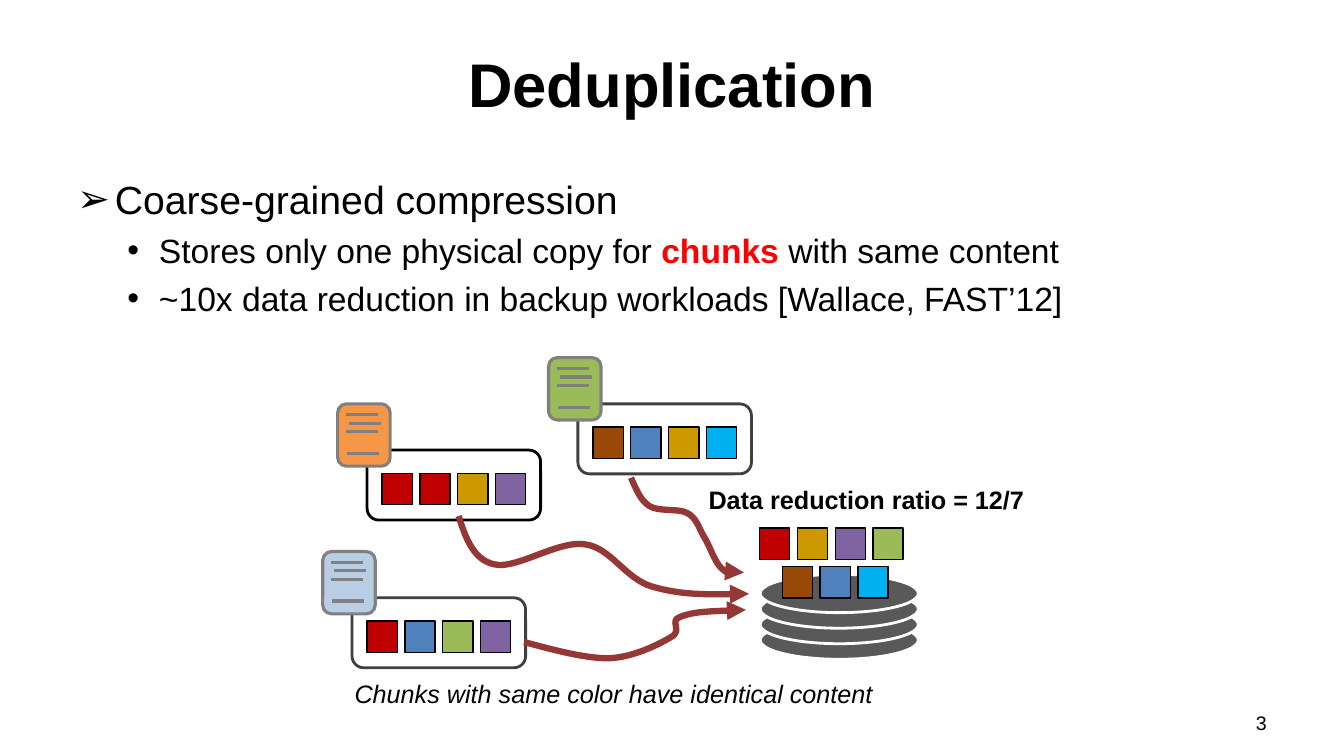
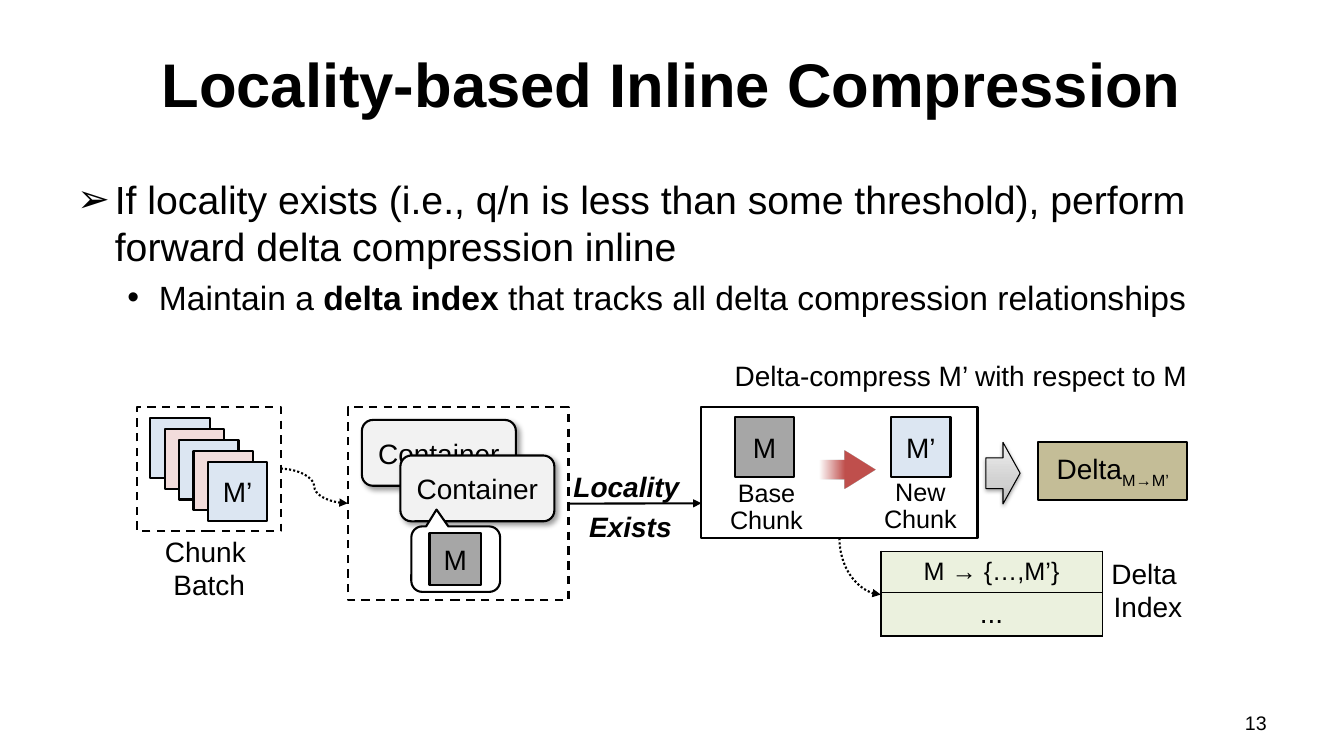
from lxml import etree
from pptx import Presentation
from pptx.dml.color import RGBColor
from pptx.enum.dml import MSO_LINE
from pptx.enum.shapes import MSO_CONNECTOR, MSO_SHAPE
from pptx.enum.text import MSO_ANCHOR, PP_ALIGN
from pptx.oxml.ns import qn
from pptx.util import Pt

RECT, ROUND, OVAL = MSO_SHAPE.RECTANGLE, MSO_SHAPE.ROUNDED_RECTANGLE, MSO_SHAPE.OVAL
ARROW, CALLOUT = MSO_SHAPE.RIGHT_ARROW, MSO_SHAPE.ROUNDED_RECTANGULAR_CALLOUT
STRAIGHT, CURVE = MSO_CONNECTOR.STRAIGHT, MSO_CONNECTOR.CURVE
LEFT, CENTER, RIGHT = PP_ALIGN.LEFT, PP_ALIGN.CENTER, PP_ALIGN.RIGHT
TOP, MIDDLE = MSO_ANCHOR.TOP, MSO_ANCHOR.MIDDLE
DASH, DOTS = MSO_LINE.DASH, MSO_LINE.ROUND_DOT

FONT = "Arial"
color = RGBColor.from_string
BLACK, WHITE, GREY = "000000", "FFFFFF", "808080"
RED, BLUE, GREEN, PURPLE = "C00000", "4F81BD", "9BBB59", "8064A2"
GOLD, BROWN, CYAN = "CC9900", "984807", "00B0F0"
PALE_BLUE, PALE_RED, MID_GREY = "DCE6F2", "F2DCDB", "A6A6A6"


def write(frame, *spans, size=20, bold=False, italic=False, align=CENTER,
          anchor=None, inset=None, spacing=None, before=0, bullet=None, level=0, indent=(0, 0)):
    """Add one paragraph; a span is a string or a (string, overrides) pair."""
    frame.word_wrap = True
    if anchor is not None:
        frame.vertical_anchor = anchor
    if inset is not None:
        frame.margin_left = frame.margin_right = frame.margin_top = frame.margin_bottom = Pt(inset)
    para = frame.add_paragraph() if frame.text else frame.paragraphs[0]
    para.alignment, para.level, para.space_before = align, level, Pt(before)
    if spacing:
        para.line_spacing = spacing
    if bullet:
        settings = para._p.get_or_add_pPr()
        settings.set("marL", str(Pt(indent[0])))
        settings.set("indent", str(Pt(indent[1])))
        etree.SubElement(settings, qn("a:buFont")).set("typeface", FONT)
        etree.SubElement(settings, qn("a:buChar")).set("char", bullet)
    for span in spans:
        text, changes = (span, {}) if isinstance(span, str) else span
        run = para.add_run()
        run.text = text
        run.font.name, run.font.size, run.font.italic = FONT, Pt(size), italic
        run.font.bold = changes.get("bold", bold)
        run.font.color.rgb = color(changes.get("ink", BLACK))
        if "baseline" in changes:
            run.font._element.set("baseline", str(changes["baseline"] * 1000))


def paint(item, fill=None, line=BLACK, width=1.5, dash=None, head=False, shadow=None,
          stops=None, angle=0):
    """Set fill, line, arrowhead and shadow of a shape or connector."""
    properties = item._element.spPr
    if stops:
        item.fill.gradient()
        item.fill.gradient_angle = angle
        stop_list = properties.find(".//" + qn("a:gsLst"))
        stop_list.clear()
        for position, hue, opacity in stops:
            stop = etree.SubElement(stop_list, qn("a:gs"), pos=str(position * 1000))
            tint = etree.SubElement(stop, qn("a:srgbClr"), val=hue)
            etree.SubElement(tint, qn("a:alpha"), val=str(opacity * 1000))
    elif fill:
        item.fill.solid()
        item.fill.fore_color.rgb = color(fill)
    elif hasattr(item, "fill"):
        item.fill.background()
    if line:
        item.line.color.rgb = color(line)
        item.line.width = Pt(width)
        if dash:
            item.line.dash_style = dash
        if head:
            etree.SubElement(item.line._get_or_add_ln(), qn("a:tailEnd"), type="triangle")
    else:
        item.line.fill.background()
    if hasattr(item, "shadow"):
        item.shadow.inherit = False
        effects = properties.find(qn("a:effectLst"))
    else:
        effects = etree.SubElement(properties, qn("a:effectLst"))
    if shadow:
        opacity, blur, distance, direction = shadow
        outer = etree.SubElement(effects, qn("a:outerShdw"), blurRad=str(Pt(blur)),
                                 dist=str(Pt(distance)), dir=str(direction * 60000))
        tint = etree.SubElement(outer, qn("a:srgbClr"), val=BLACK)
        etree.SubElement(tint, qn("a:alpha"), val=str(opacity * 1000))
    return item


deck = Presentation()
deck.slide_width, deck.slide_height = Pt(960), Pt(540)

# Title, bullets and page number of both slides
contents = [
    ("Deduplication", "3", ["Coarse-grained compression"], [
        ["Stores only one physical copy for ", ("chunks", {"bold": True, "ink": "FF0000"}),
         " with same content"],
        ["~10x data reduction in backup workloads [Wallace, FAST’12]"]]),
    ("Locality-based Inline Compression", "13",
     ["If locality exists (i.e., q/n is less than some threshold), "
      "perform forward delta compression inline"],
     [["Maintain a ", ("delta index", {"bold": True}),
       " that tracks all delta compression relationships"]]),
]
pages = []
for heading, number, point, details in contents:
    page = deck.slides.add_slide(deck.slide_layouts[5])
    pages.append(page)
    title = page.shapes.title
    title.left, title.top, title.width, title.height = Pt(48), Pt(14), Pt(864), Pt(90)
    write(title.text_frame, heading, size=44, bold=True, anchor=MIDDLE)
    body = page.shapes.add_textbox(Pt(48), Pt(121.5), Pt(864), Pt(116)).text_frame
    write(body, *point, size=28, align=LEFT, bullet="➢", indent=(27, -27))
    for detail in details:
        write(body, *detail, size=24, align=LEFT, before=5.5, bullet="•", level=1,
              indent=(58.5, -22.5))
    footer = page.shapes.add_textbox(Pt(688), Pt(504), Pt(224), Pt(25)).text_frame
    write(footer, number, size=14, align=RIGHT)

# Slide 1: files, each an icon over a box
shapes = pages[0].shapes
chunk_rows = []
files = [
    (230.5, 394, "B9CDE5", "404040", [RED, BLUE, GREEN, PURPLE]),
    (241.2, 288.5, "F79646", BLACK, [RED, RED, GOLD, PURPLE]),
    (391.8, 255.5, GREEN, "404040", [BROWN, BLUE, GOLD, CYAN]),
]
for left, top, icon_fill, outline, hues in files:
    box = shapes.add_shape(ROUND, Pt(left + 21), Pt(top + 33), Pt(124), Pt(50))
    paint(box, line=outline, width=2)
    icon = shapes.add_shape(ROUND, Pt(left), Pt(top), Pt(37.5), Pt(44.5))
    paint(icon, icon_fill, GREY, 2.25)
    for dx, dy in [(6, 7.7), (8.2, 13.8), (6, 20), (7, 35.3)]:
        stroke = shapes.add_connector(STRAIGHT, Pt(left + dx), Pt(top + dy),
                                      Pt(left + dx + 22.6), Pt(top + dy))
        paint(stroke, line=GREY, width=2.25)
    chunk_rows.append((left + 31.8, top + 49.6, hues))

# Disk, then all chunks
for layer in range(4):
    platter = shapes.add_shape(OVAL, Pt(543), Pt(443.5 - 11.1 * layer), Pt(113), Pt(27.4))
    paint(platter, "595959", WHITE, 2)
chunk_rows += [(542.6, 377.2, [RED, GOLD, PURPLE, GREEN]),
               (558.8, 404.8, [BROWN, BLUE, CYAN])]
for left, top, hues in chunk_rows:
    for column, hue in enumerate(hues):
        chunk = shapes.add_shape(RECT, Pt(left + 27 * column), Pt(top), Pt(21.6), Pt(22.3))
        paint(chunk, hue, width=1)

# Curved arrows: a start point, then three points for each Bézier segment
flows = [
    [(327.6, 368.6), (332.6, 384.5), (338.4, 400.3), (353.5, 403.2),
     (368.6, 406.8), (398.9, 385.9), (417.6, 388.8),
     (436.3, 391), (446.4, 413.3), (465.8, 419),
     (486, 424.8), (510.5, 424.8), (535, 424.1)],
    [(374.4, 458.6), (396, 464.4), (417.6, 470.2), (434.9, 470.2),
     (452.9, 469.4), (470.9, 460.1), (479.5, 455),
     (488.2, 450), (477.4, 443.5), (486, 440.6),
     (494.6, 437), (514.1, 436.3), (532.8, 435.6)],
    [(450.7, 341.3), (454.3, 349.2), (457.2, 357.1), (463.7, 361.4),
     (470.2, 365.8), (484.6, 362.9), (491, 366.5),
     (497.5, 370.1), (499, 376.6), (502.6, 383),
     (506.9, 389.5), (510.5, 401.8), (515.5, 406.1),
     (520.6, 410.4), (526.3, 409.7), (531.4, 409)],
]
for points in flows:
    start, *others = [(Pt(x), Pt(y)) for x, y in points]
    builder = shapes.build_freeform(*start)
    builder.add_line_segments(others, close=False)
    flow = builder.convert_to_shape()
    segments = list(flow._element.iter(qn("a:lnTo")))
    outline = segments[0].getparent()
    for first in range(0, len(segments), 3):
        bend = etree.SubElement(outline, qn("a:cubicBezTo"))
        for segment in segments[first:first + 3]:
            bend.append(segment[0])
            outline.remove(segment)
    paint(flow, line="953735", width=4.5, head=True)

# Slide 2: free labels of both slides
labels = [
    (0, 499, 342.7, 253, 31, ["Data reduction ratio = 12/7"],
     {"size": 18, "bold": True, "align": LEFT}),
    (0, 246.2, 481, 388, 29, ["Chunks with same color have identical content"],
     {"size": 18, "italic": True, "align": LEFT}),
    (1, 401, 326.9, 98.6, 62.6, ["Locality ", "Exists"],
     {"bold": True, "italic": True, "spacing": 1.2}),
    (1, 98, 378, 103, 55.4, ["Chunk ", "Batch"], {}),
    (1, 463, 339.8, 169, 46.8, ["Base", "Chunk"], {"size": 18, "spacing": 0.9}),
    (1, 573, 339.1, 169, 46.8, ["New", "Chunk"], {"size": 18, "spacing": 0.9}),
    (1, 744.5, 393.8, 151, 55.4, ["Delta ", "Index"], {}),
    (1, 517.7, 252.7, 340, 31.7, ["Delta-compress M’ with respect to M"], {"align": LEFT}),
]
for index, left, top, width, height, lines, style in labels:
    label = pages[index].shapes.add_textbox(Pt(left), Pt(top), Pt(width), Pt(height))
    for line in lines:
        write(label.text_frame, line, **style)

# Boxes, from back to front
shapes = pages[1].shapes
soft = {"fill": "F2F2F2", "shadow": (40, 4, 3, 45)}
boxes = [(RECT, 107.3 + 10.3 * step, 298.8 + 7.75 * step, 42.5, 42.5,
          ["M’"] if step == 4 else [], {"fill": PALE_RED if step % 2 else PALE_BLUE})
         for step in range(5)]
boxes += [
    (RECT, 98, 291, 103, 88.5, [], {"dash": DASH}),
    (ROUND, 258.5, 300, 110, 47, ["Container"], soft),
    (ROUND, 286, 325.4, 110, 47, ["Container"], soft),
    (CALLOUT, 293.8, 376, 63.4, 46.8, [], {"fill": WHITE}),
    (RECT, 306.8, 381, 36.7, 36.7, ["M"], {"fill": MID_GREY}),
    (RECT, 524.9, 298, 42.5, 42.5, ["M"], {"fill": MID_GREY}),
    (RECT, 636.5, 298, 42.5, 42.5, ["M’"], {"fill": PALE_BLUE}),
    (RECT, 741.6, 316, 106.6, 41, ["Delta", ("M→M’", {"baseline": -25})], {"fill": "C4BD97"}),
    (RECT, 501, 291, 197.3, 93.6, [], {}),
    (ARROW, 585.4, 321.8, 39.6, 27.4, [],
     {"line": None, "stops": [(0, "C0504D", 0), (46, "C0504D", 100), (81, "C0504D", 100)]}),
    (ARROW, 704.2, 316, 24.5, 44, [],
     {"width": 0.75, "shadow": (38, 3.1, 1.6, 90), "angle": 90,
      "stops": [(0, "BDBDBD", 100), (35, "D1D1D1", 100), (100, "EEEEEE", 100)]}),
    (RECT, 248.4, 291, 157.7, 137.5, [], {"dash": DASH}),
]
for kind, left, top, width, height, spans, style in boxes:
    box = shapes.add_shape(kind, Pt(left), Pt(top), Pt(width), Pt(height))
    paint(box, **style)
    if spans:
        write(box.text_frame, *spans, anchor=MIDDLE, inset=0)
    if kind == CALLOUT:
        for index, value in enumerate([-0.216, -0.757, 0.167]):
            box.adjustments[index] = value
    elif style.get("line", BLACK) is None:
        box.adjustments[1] = 0.8
container_area = box

# Connectors
locality = shapes.add_connector(STRAIGHT, Pt(406), Pt(359.5), Pt(501), Pt(359.5))
locality.begin_connect(container_area, 3)
paint(locality, head=True)
lookup = shapes.add_connector(CURVE, Pt(200.5), Pt(334.8), Pt(248.4), Pt(359.5))
paint(lookup, dash=DOTS, head=True)
record = shapes.add_connector(CURVE, Pt(634.5), Pt(389.8), Pt(594.2), Pt(419.3))
record._element.spPr.find(qn("a:prstGeom")).set("prst", "curvedConnector2")
record._element.spPr.find(qn("a:xfrm")).set("rot", str(270 * 60000))
paint(record, dash=DOTS, head=True)

# Delta index table
rows = [("M → {…,M’}", 18, 29.2), ("...", 20, 30.8)]
table = shapes.add_table(len(rows), 1, Pt(629.3), Pt(393.8), Pt(158), Pt(60)).table
for index, (text, size, height) in enumerate(rows):
    table.rows[index].height = Pt(height)
    cell = table.cell(index, 0)
    cell.fill.solid()
    cell.fill.fore_color.rgb = color("EBF1DE")
    cell.vertical_anchor = MIDDLE
    write(cell.text_frame, text, size=size)
    for place, side in enumerate(["a:lnL", "a:lnR", "a:lnT", "a:lnB"]):
        border = etree.Element(qn(side), w=str(Pt(1)))
        solid = etree.SubElement(border, qn("a:solidFill"))
        etree.SubElement(solid, qn("a:srgbClr"), val=BLACK)
        cell._tc.get_or_add_tcPr().insert(place, border)

deck.save("out.pptx")
